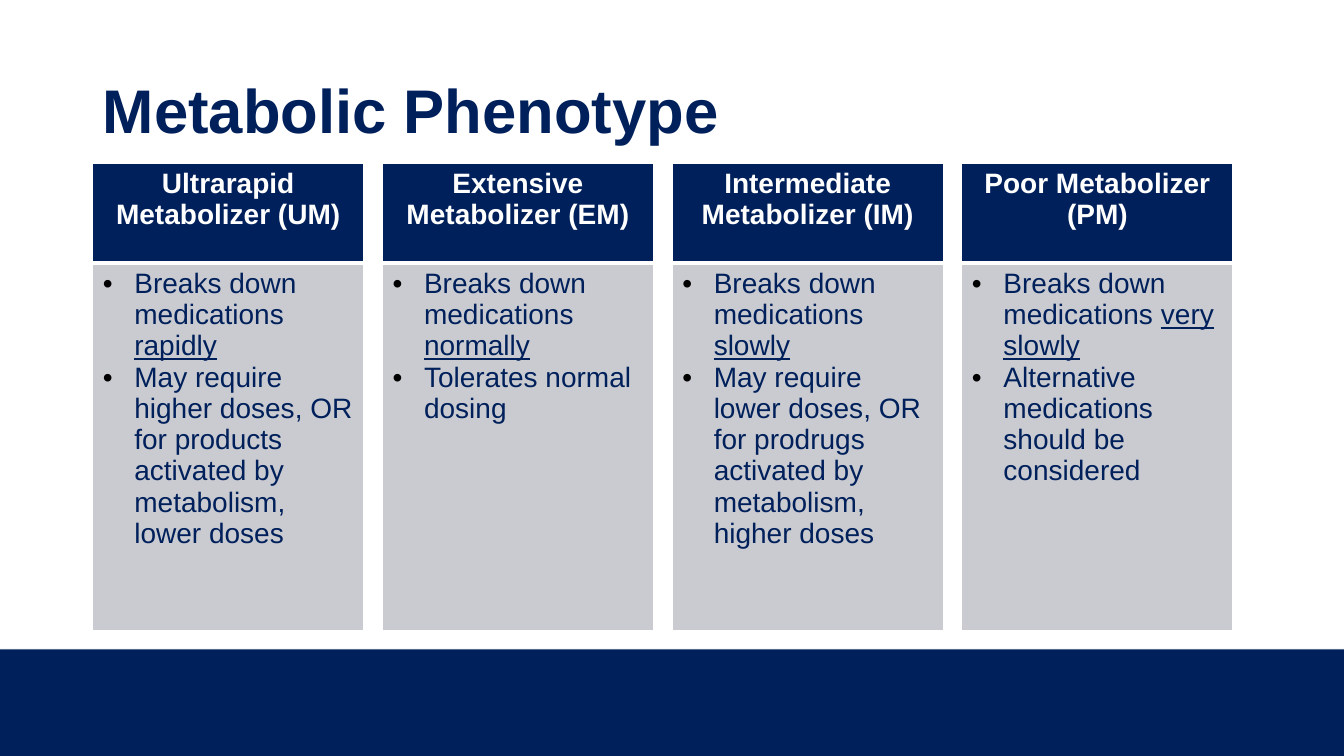
from lxml import etree
from pptx import Presentation
from pptx.dml.color import RGBColor
from pptx.enum.shapes import MSO_SHAPE
from pptx.enum.text import MSO_ANCHOR, PP_ALIGN
from pptx.oxml.ns import qn
from pptx.util import Pt

RECTANGLE = MSO_SHAPE.RECTANGLE
MIDDLE, TOP = MSO_ANCHOR.MIDDLE, MSO_ANCHOR.TOP
LEFT, CENTER = PP_ALIGN.LEFT, PP_ALIGN.CENTER

TITLE = "Metabolic Phenotype"
# Heading, how fast medications are broken down, what it means for dosing
PHENOTYPES = [
    ("Ultrarapid Metabolizer (UM)", "rapidly",
     "May require higher doses, OR for products activated by metabolism, lower doses"),
    ("Extensive Metabolizer (EM)", "normally",
     "Tolerates normal dosing"),
    ("Intermediate Metabolizer (IM)", "slowly",
     "May require lower doses, OR for prodrugs activated by metabolism, higher doses"),
    ("Poor Metabolizer (PM)", "very slowly",
     "Alternative medications should be considered"),
]
BREAKDOWN = "Breaks down medications "

COLORS = {"navy": "00205B", "gray": "CACBD0", "pale": "F8F8F8",
          "white": "FFFFFF", "black": "000000"}
FONT = "Arial"
SLIDE_W, SLIDE_H = 960, 540
MARGIN = 66.24
CARD_TOP, CARD_W, CARD_PITCH = 116.64, 193.6, 206.94
HEADING_H, BODY_H = 71.3, 262.4
INDENT = 22.5
FOOTER_TOP, FOOTER_EDGE = 463.8, 0.8


def rgb(color):
    return RGBColor.from_string(COLORS[color])


def add_band(slide, top, color):
    """Fill the slide's full width from top down to its lower edge."""
    band = slide.shapes.add_shape(RECTANGLE, 0, Pt(top), Pt(SLIDE_W), Pt(SLIDE_H - top))
    band.shadow.inherit = False
    band.fill.solid()
    band.fill.fore_color.rgb = rgb(color)
    band.line.fill.background()


def add_run(paragraph, text, size, color, bold=False, underline=False):
    run = paragraph.add_run()
    run.text = text
    font = run.font
    font.name, font.size = FONT, Pt(size)
    font.bold, font.underline = bold, underline
    font.color.rgb = rgb(color)


def add_bullet(paragraph):
    properties = paragraph._p.get_or_add_pPr()
    properties.set("marL", str(Pt(INDENT)))
    properties.set("indent", str(-Pt(INDENT)))
    bullet_color = etree.SubElement(properties, qn("a:buClr"))
    etree.SubElement(bullet_color, qn("a:srgbClr"), val=COLORS["black"])
    etree.SubElement(properties, qn("a:buFont"), typeface=FONT)
    etree.SubElement(properties, qn("a:buChar"), char="•")


def style_cell(cell, fill, top_width, bottom_width):
    cell.vertical_anchor = TOP
    cell.fill.solid()
    cell.fill.fore_color.rgb = rgb(fill)
    properties = cell._tc.get_or_add_tcPr()
    borders = (("a:lnL", 1), ("a:lnR", 1), ("a:lnT", top_width), ("a:lnB", bottom_width))
    for position, (tag, width) in enumerate(borders):
        border = etree.Element(qn(tag), w=str(Pt(width)))
        solid = etree.SubElement(border, qn("a:solidFill"))
        etree.SubElement(solid, qn("a:srgbClr"), val=COLORS["white"])
        properties.insert(position, border)


def add_card(slide, left, heading, speed, dosing):
    table = slide.shapes.add_table(2, 1, Pt(left), Pt(CARD_TOP), Pt(CARD_W),
                                   Pt(HEADING_H + BODY_H)).table
    table.rows[0].height, table.rows[1].height = Pt(HEADING_H), Pt(BODY_H)
    heading_cell, body_cell = table.cell(0, 0), table.cell(1, 0)
    style_cell(heading_cell, "navy", 1, 3)
    style_cell(body_cell, "gray", 3, 1)

    heading_line = heading_cell.text_frame.paragraphs[0]
    heading_line.alignment = CENTER
    add_run(heading_line, heading, 20, "white", bold=True)

    breakdown_line = body_cell.text_frame.paragraphs[0]
    dosing_line = body_cell.text_frame.add_paragraph()
    for line in (breakdown_line, dosing_line):
        add_bullet(line)
    add_run(breakdown_line, BREAKDOWN, 20, "navy")
    add_run(breakdown_line, speed, 20, "navy", underline=True)
    add_run(dosing_line, dosing, 20, "navy")


def add_title(slide):
    title = slide.shapes.title
    title.left, title.top = Pt(MARGIN), Pt(28.8)
    title.width, title.height = Pt(828), Pt(104.4)
    frame = title.text_frame
    frame.vertical_anchor = MIDDLE
    frame.word_wrap = True
    line = frame.paragraphs[0]
    line.alignment = LEFT
    line.line_spacing = 0.9
    add_run(line, TITLE, 44, "navy", bold=True)


def main():
    deck = Presentation()
    deck.slide_width, deck.slide_height = Pt(SLIDE_W), Pt(SLIDE_H)
    slide = deck.slides.add_slide(deck.slide_layouts[5])
    add_band(slide, FOOTER_TOP - FOOTER_EDGE, "pale")
    add_band(slide, FOOTER_TOP, "navy")
    add_title(slide)
    for column, phenotype in enumerate(PHENOTYPES):
        add_card(slide, MARGIN + column * CARD_PITCH, *phenotype)
    deck.save("out.pptx")


if __name__ == "__main__":
    main()
